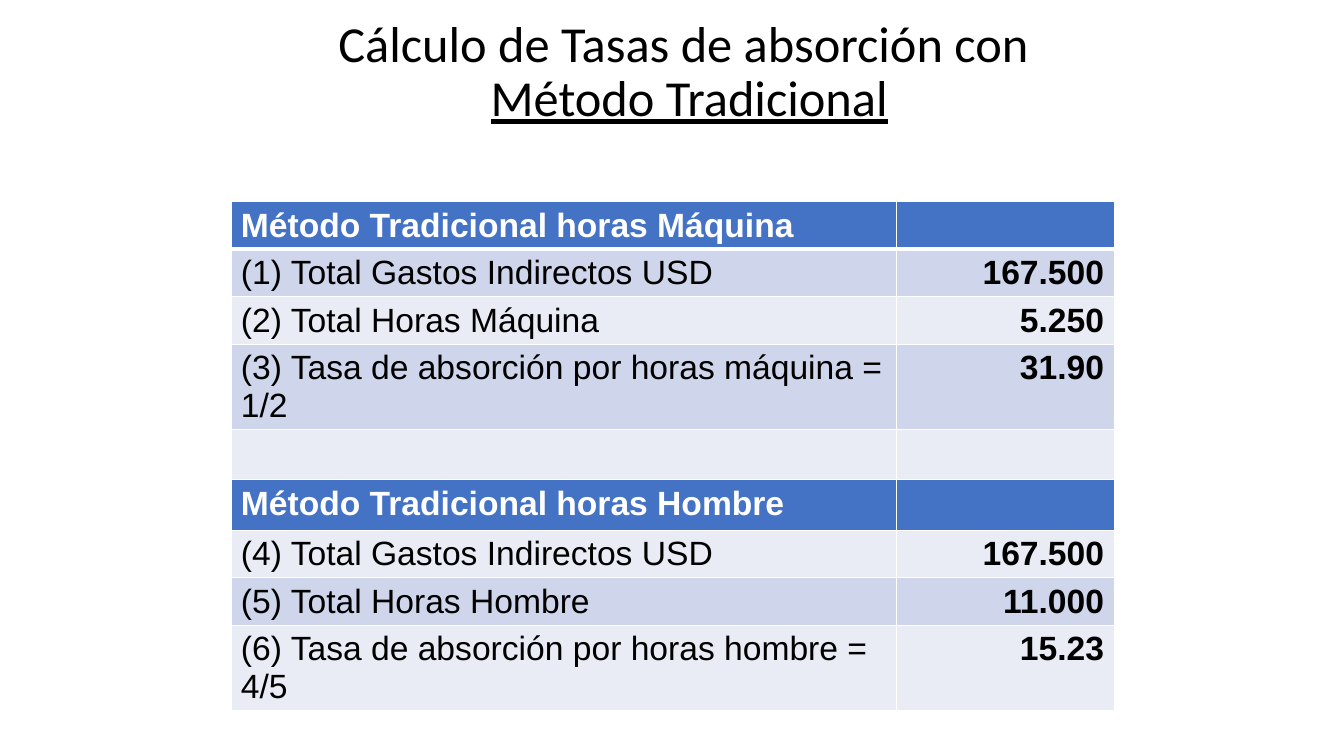
"""Build a slide with absorption rates worked out by the traditional method."""
from lxml import etree
from pptx import Presentation
from pptx.dml.color import RGBColor
from pptx.enum.text import MSO_ANCHOR, MSO_AUTO_SIZE, PP_ALIGN
from pptx.oxml.ns import qn
from pptx.util import Inches, Pt

CENTER, LEFT, RIGHT = PP_ALIGN.CENTER, PP_ALIGN.LEFT, PP_ALIGN.RIGHT
MIDDLE = MSO_ANCHOR.MIDDLE
NO_AUTOFIT = MSO_AUTO_SIZE.NONE
BLACK, WHITE, BLUE = "000000", "FFFFFF", "4472C4"
BANDS = ["E9EBF5", "CFD5EA"]
TITLE_ONLY = 5


def add_span(para, text, font_name, size, color):
    span = para.add_run()
    span.text = text
    span.font.name = font_name
    span.font.size = Pt(size)
    span.font.color.rgb = RGBColor.from_string(color)
    return span


def add_border(cell, side, width):
    properties = cell._tc.get_or_add_tcPr()
    line = etree.SubElement(properties, qn(f"a:ln{side}"), w=str(Pt(width)))
    fill = etree.SubElement(line, qn("a:solidFill"))
    etree.SubElement(fill, qn("a:srgbClr"), val=WHITE)


deck = Presentation()
deck.slide_width, deck.slide_height = Inches(13.33), Inches(7.5)
page = deck.slides.add_slide(deck.slide_layouts[TITLE_ONLY])

title = page.shapes.title
title.left, title.top = Inches(1.03), 0
title.width, title.height = Inches(11.5), Inches(1.45)
frame = title.text_frame
frame.word_wrap = True
frame.auto_size = NO_AUTOFIT
frame.vertical_anchor = MIDDLE
para = frame.paragraphs[0]
para.alignment = CENTER
para.line_spacing = 0.9
add_span(para, "Cálculo de Tasas de absorción con", "Calibri", 36, BLACK)
para.add_line_break()
etree.SubElement(para._p.find(qn("a:br")), qn("a:rPr"), sz="3600")
add_span(para, " ", "Calibri", 36, BLACK)
add_span(para, "Método Tradicional", "Calibri", 36, BLACK).font.underline = True

rates = [
    ("Método Tradicional horas Máquina", ""),
    ("(1) Total Gastos Indirectos USD", "167.500"),
    ("(2) Total Horas Máquina", "5.250"),
    ("(3) Tasa de absorción por horas máquina = 1/2", "31.90"),
    ("", ""),
    ("Método Tradicional horas Hombre", ""),
    ("(4) Total Gastos Indirectos USD", "167.500"),
    ("(5) Total Horas Hombre", "11.000"),
    ("(6) Tasa de absorción por horas hombre = 4/5", "15.23"),
]
heights = [0.46, 0.47, 0.47, 0.84, 0.5, 0.5, 0.47, 0.47, 0.84]
table = page.shapes.add_table(
    len(rates), 2, Inches(2.29), Inches(2), Inches(8.76), Inches(sum(heights))
).table
table.columns[0].width, table.columns[1].width = Inches(6.6), Inches(2.16)

for row, (texts, height) in enumerate(zip(rates, heights)):
    table.rows[row].height = Inches(height)
    heading = texts[0].startswith("Método")
    for column, text in enumerate(texts):
        cell = table.cell(row, column)
        for side in "LRTB":
            header_edge = (row, side) in [(0, "B"), (1, "T")]
            add_border(cell, side, 3 if header_edge else 1)
        cell.fill.solid()
        cell.fill.fore_color.rgb = RGBColor.from_string(
            BLUE if heading else BANDS[row % 2])
        para = cell.text_frame.paragraphs[0]
        para.alignment = RIGHT if column else LEFT
        if text:
            span = add_span(para, text, "Arial", 24, WHITE if heading else BLACK)
            span.font.bold = heading or column == 1

deck.save("out.pptx")
